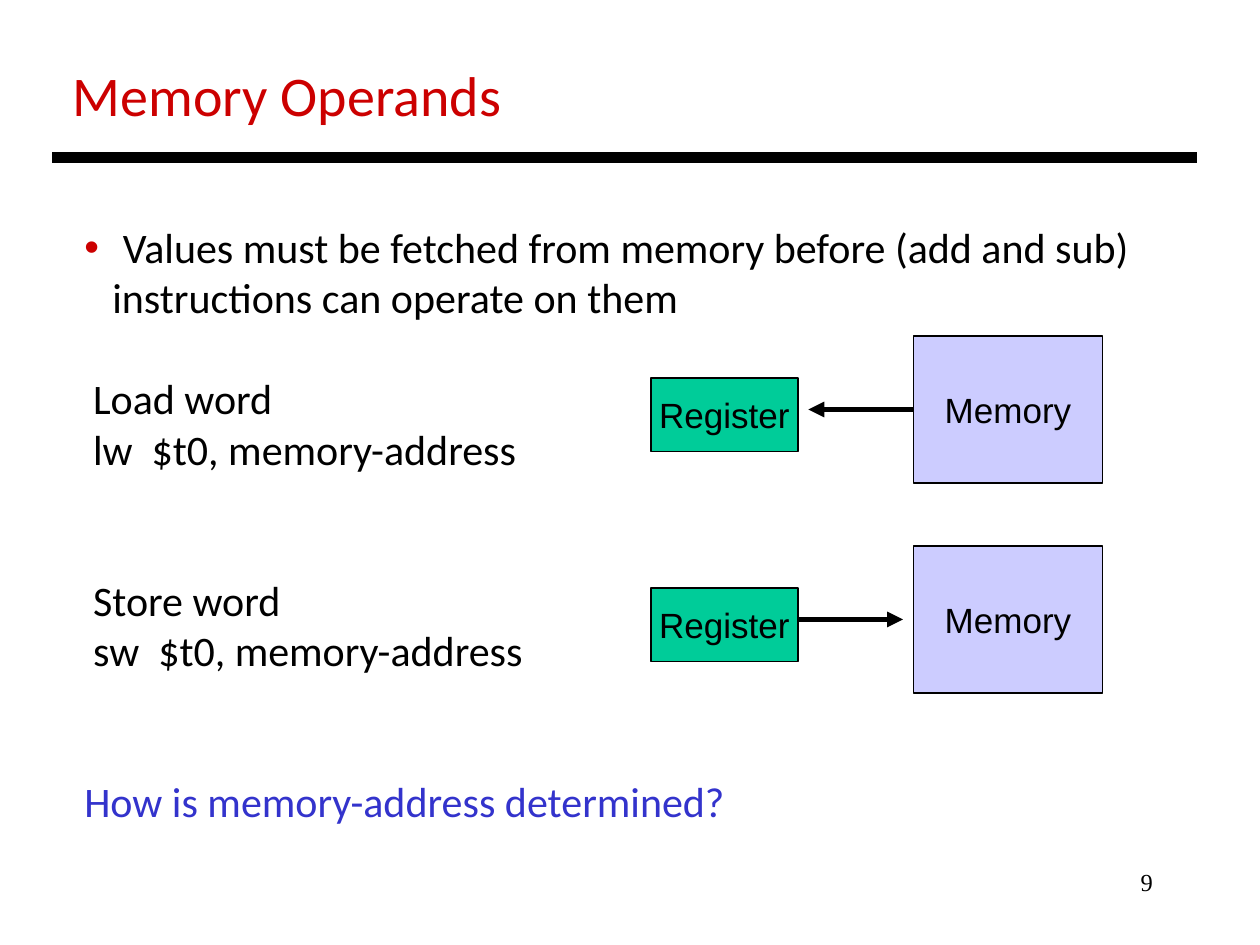
"""Build the Memory Operands slide with its load and store diagrams."""
import pptx
import pptx.dml.color
import pptx.enum.shapes
import pptx.enum.text
import pptx.oxml
import pptx.oxml.ns
import pptx.util

Pt = pptx.util.Pt
ALIGN = pptx.enum.text.PP_ALIGN
ANCHOR = pptx.enum.text.MSO_ANCHOR
SHAPE = pptx.enum.shapes.MSO_SHAPE
NAMESPACE = pptx.oxml.ns.nsdecls("a")


def color(value):
    return pptx.dml.color.RGBColor.from_string(value)


def write(para, text, font="Calibri", size=24, ink="000000", align=ALIGN.LEFT):
    para.alignment = align
    span = para.add_run()
    span.text = text
    span.font.name = font
    span.font.size = Pt(size)
    span.font.color.rgb = color(ink)


deck = pptx.Presentation()
deck.slide_width, deck.slide_height = Pt(720), Pt(540)
page = deck.slides.add_slide(deck.slide_layouts[1])

title, body = page.placeholders
number = page.shapes.add_textbox(Pt(516), Pt(492), Pt(150), Pt(36))
frames = [
    (title, 34.5, 31, 262, 46),
    (body, 41, 123, 613, 356),
    (number, 516, 492, 150, 36),
]
for box, left, top, width, height in frames:
    box.left, box.top, box.width, box.height = Pt(left), Pt(top), Pt(width), Pt(height)
    box.text_frame.auto_size = pptx.enum.text.MSO_AUTO_SIZE.NONE
    box.text_frame.word_wrap = box is number
    box.text_frame.vertical_anchor = ANCHOR.TOP

write(title.text_frame.paragraphs[0], "Memory Operands", size=32, ink="CC0000")
write(number.text_frame.paragraphs[0], "9", font="Times New Roman", size=14, align=ALIGN.RIGHT)

LINE = 28.8
lines = [
    ("Values must be fetched from memory before (add and sub)", 22, 0, "000000"),
    ("instructions can operate on them", 16, 0, "000000"),
    ("Load word", 5, 1, "000000"),
    ("lw  $t0, memory-address", 5, 0, "000000"),
    ("Store word", 5, 2, "000000"),
    ("sw  $t0, memory-address", 5, 0, "000000"),
    ("How is memory-address determined?", 0, 2, "3333CC"),
]
for index, (text, indent, gap_lines, ink) in enumerate(lines):
    para = body.text_frame.paragraphs[0] if index == 0 else body.text_frame.add_paragraph()
    write(para, text, ink=ink)
    para.line_spacing = Pt(LINE)
    para.space_before = Pt(gap_lines * LINE)
    para.space_after = Pt(0)
    properties = para._p.get_or_add_pPr()
    properties.set("marL", str(Pt(indent)))
    properties.set("indent", str(-Pt(indent) if index == 0 else 0))
    marks = ["<a:buNone {}/>"]
    if index == 0:
        marks = [
            '<a:buClr {}><a:srgbClr val="CC0000"/></a:buClr>',
            '<a:buFont {} typeface="Arial"/>',
            '<a:buChar {} char="•"/>',
        ]
    for mark in marks:
        properties.append(pptx.oxml.parse_xml(mark.format(NAMESPACE)))

blocks = [
    ("Register", 372, 216, 84, 42, "00CC99"),
    ("Memory", 522, 192, 108, 84, "CCCCFF"),
]
for offset in (0, 120):
    for label, left, top, width, height, fill in blocks:
        box = page.shapes.add_shape(SHAPE.RECTANGLE, Pt(left), Pt(top + offset), Pt(width), Pt(height))
        box.shadow.inherit = False
        box.fill.solid()
        box.fill.fore_color.rgb = color(fill)
        box.line.color.rgb = color("000000")
        box.line.width = Pt(0.75)
        box.text_frame.word_wrap = False
        box.text_frame.vertical_anchor = ANCHOR.MIDDLE
        write(box.text_frame.paragraphs[0], label, font="Arial", size=20, align=ALIGN.CENTER)

connectors = [
    (30, 684, 90, 6, False),
    (522, 462, 234, 3, True),
    (456, 516, 354, 3, True),
]
for start, end, height, weight, arrow in connectors:
    line = page.shapes.add_connector(
        pptx.enum.shapes.MSO_CONNECTOR.STRAIGHT, Pt(start), Pt(height), Pt(end), Pt(height)
    )
    line.line.color.rgb = color("000000")
    line.line.width = Pt(weight)
    if arrow:
        head = pptx.oxml.parse_xml(f'<a:tailEnd {NAMESPACE} type="triangle"/>')
        line.line._get_or_add_ln().append(head)
    line._element.spPr.append(pptx.oxml.parse_xml(f"<a:effectLst {NAMESPACE}/>"))

deck.save("out.pptx")
